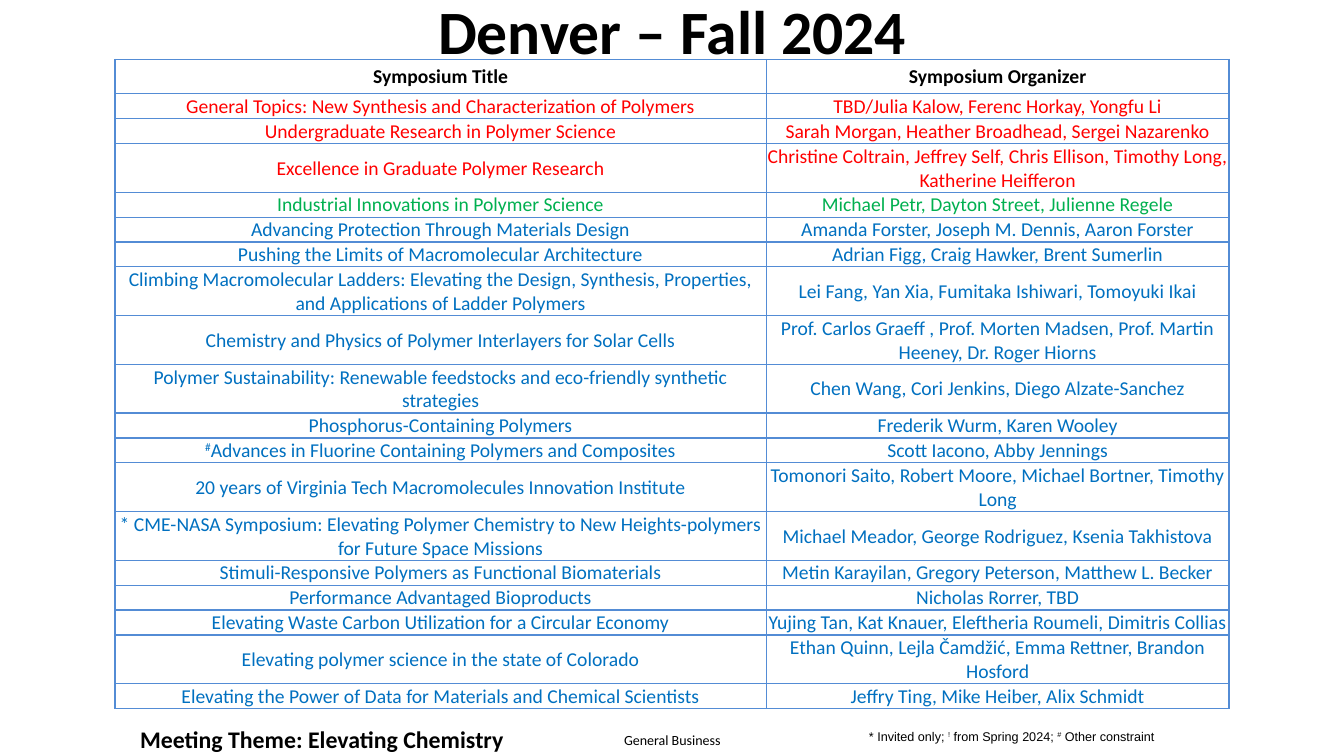
from lxml.etree import SubElement
from pptx import Presentation
from pptx.dml.color import RGBColor
from pptx.enum.text import MSO_ANCHOR as Anchor, PP_ALIGN as Align
from pptx.oxml import parse_xml
from pptx.oxml.ns import nsdecls, qn

PX = 9144
BLACK, RED, GREEN, BLUE = "000000", "FF0000", "00B050", "0070C0"
EDGE, WHITE = "538CD5", "FFFFFF"
HEAD, LINE = 34, 24

ROWS = [
    ("Symposium Title", "Symposium Organizer", BLACK, 1),
    ("General Topics: New Synthesis and Characterization of Polymers",
     "TBD/Julia Kalow, Ferenc Horkay, Yongfu Li", RED, 1),
    ("Undergraduate Research in Polymer Science",
     "Sarah Morgan, Heather Broadhead, Sergei Nazarenko", RED, 1),
    ("Excellence in Graduate Polymer Research",
     "Christine Coltrain, Jeffrey Self, Chris Ellison, Timothy Long, Katherine Heifferon", RED, 2),
    ("Industrial Innovations in Polymer Science",
     "Michael Petr, Dayton Street, Julienne Regele", GREEN, 1),
    ("Advancing Protection Through Materials Design",
     "Amanda Forster, Joseph M. Dennis, Aaron Forster", BLUE, 1),
    ("Pushing the Limits of Macromolecular Architecture",
     "Adrian Figg, Craig Hawker, Brent Sumerlin", BLUE, 1),
    ("Climbing Macromolecular Ladders: Elevating the Design, Synthesis, Properties, "
     "and Applications of Ladder Polymers",
     "Lei Fang, Yan Xia, Fumitaka Ishiwari, Tomoyuki Ikai", BLUE, 2),
    ("Chemistry and Physics of Polymer Interlayers for Solar Cells",
     "Prof. Carlos Graeff , Prof. Morten Madsen, Prof. Martin Heeney, Dr. Roger Hiorns", BLUE, 2),
    ("Polymer Sustainability: Renewable feedstocks and eco-friendly synthetic strategies",
     "Chen Wang, Cori Jenkins, Diego Alzate-Sanchez", BLUE, 2),
    ("Phosphorus-Containing Polymers", "Frederik Wurm, Karen Wooley", BLUE, 1),
    ("^#^Advances in Fluorine Containing Polymers and Composites",
     "Scott Iacono, Abby Jennings", BLUE, 1),
    ("20 years of Virginia Tech Macromolecules Innovation Institute",
     "Tomonori Saito, Robert Moore, Michael Bortner, Timothy Long", BLUE, 2),
    ("* CME-NASA Symposium: Elevating Polymer Chemistry to New Heights-polymers "
     "for Future Space Missions",
     "Michael Meador, George Rodriguez, Ksenia Takhistova", BLUE, 2),
    ("Stimuli-Responsive Polymers as Functional Biomaterials",
     "Metin Karayilan, Gregory Peterson, Matthew L. Becker", BLUE, 1),
    ("Performance Advantaged Bioproducts", "Nicholas Rorrer, TBD", BLUE, 1),
    ("Elevating Waste Carbon Utilization for a Circular Economy",
     "Yujing Tan, Kat Knauer, Eleftheria Roumeli, Dimitris Collias", BLUE, 1),
    ("Elevating polymer science in the state of Colorado",
     "Ethan Quinn, Lejla Čamdžić, Emma Rettner, Brandon Hosford", BLUE, 2),
    ("Elevating the Power of Data for Materials and Chemical Scientists",
     "Jeffry Ting, Mike Heiber, Alix Schmidt", BLUE, 1),
]


def px(*vals):
    return [val * PX for val in vals]


def rgb(code):
    return RGBColor.from_string(code)


def write(frame, text, size=14, color=BLACK, bold=False, font="Calibri", align=Align.LEFT):
    para = frame.paragraphs[0]
    para.alignment = align
    for pos, part in enumerate(text.split("^")):
        if not part:
            continue
        run = para.add_run()
        run.text = part
        run.font.size = size * 12700
        run.font.name = font
        run.font.bold = bold
        run.font.color.rgb = rgb(color)
        if pos % 2:
            run._r.get_or_add_rPr().set("baseline", "30000")


def label(slide, box, text, pad=(10, 5), anchor=Anchor.TOP, **style):
    frame = slide.shapes.add_textbox(*px(*box)).text_frame
    frame.word_wrap = True
    frame.vertical_anchor = anchor
    frame.margin_left = frame.margin_right = pad[0] * PX
    frame.margin_top = frame.margin_bottom = pad[1] * PX
    write(frame, text, **style)


def border(cell):
    props = cell._tc.get_or_add_tcPr()
    for pos, side in enumerate("LRTB"):
        line = parse_xml(f'<a:ln{side} {nsdecls("a")} w="12700"/>')
        fill = SubElement(line, qn("a:solidFill"))
        SubElement(fill, qn("a:srgbClr")).set("val", EDGE)
        props.insert(pos, line)


def program(slide, left, top, width, height):
    table = slide.shapes.add_table(len(ROWS), 2, *px(left, top, width, height)).table
    first = 646
    table.columns[0].width, table.columns[1].width = px(first, width - first)
    for num, (title, names, color, lines) in enumerate(ROWS):
        table.rows[num].height = (lines * LINE if num else HEAD) * PX
        for col, text in enumerate((title, names)):
            cell = table.cell(num, col)
            cell.margin_left = cell.margin_right = cell.margin_top = PX
            cell.margin_bottom = 0
            cell.vertical_anchor = Anchor.BOTTOM if col and 1 <= num <= 3 else Anchor.MIDDLE
            cell.fill.solid()
            cell.fill.fore_color.rgb = rgb(WHITE)
            border(cell)
            write(cell.text_frame, text, color=color, bold=num == 0, align=Align.CENTER)


def footer(slide, left, top):
    label(slide, (left, top, 449, 39), "Meeting Theme: Elevating Chemistry", size=17, bold=True)
    label(slide, (left + 490, top + 12, 99, 17), "General Business", pad=(0, 0), size=10)
    label(slide, (left + 723, top + 4, 314, 25),
          "* Invited only; ^!^ from Spring 2024; ^#^ Other constraint", size=9, font="Arial")


def main():
    deck = Presentation()
    deck.slide_width, deck.slide_height = px(1333, 750)
    slide = deck.slides.add_slide(deck.slide_layouts[6])
    tall = HEAD + LINE * sum(row[3] for row in ROWS[1:])
    program(slide, 114, 59, 1105, tall)
    label(slide, (217, 0, 900, 59), "Denver – Fall 2024", anchor=Anchor.MIDDLE,
          size=44, bold=True, align=Align.CENTER)
    footer(slide, 129, 714)
    deck.save("out.pptx")


if __name__ == "__main__":
    main()
